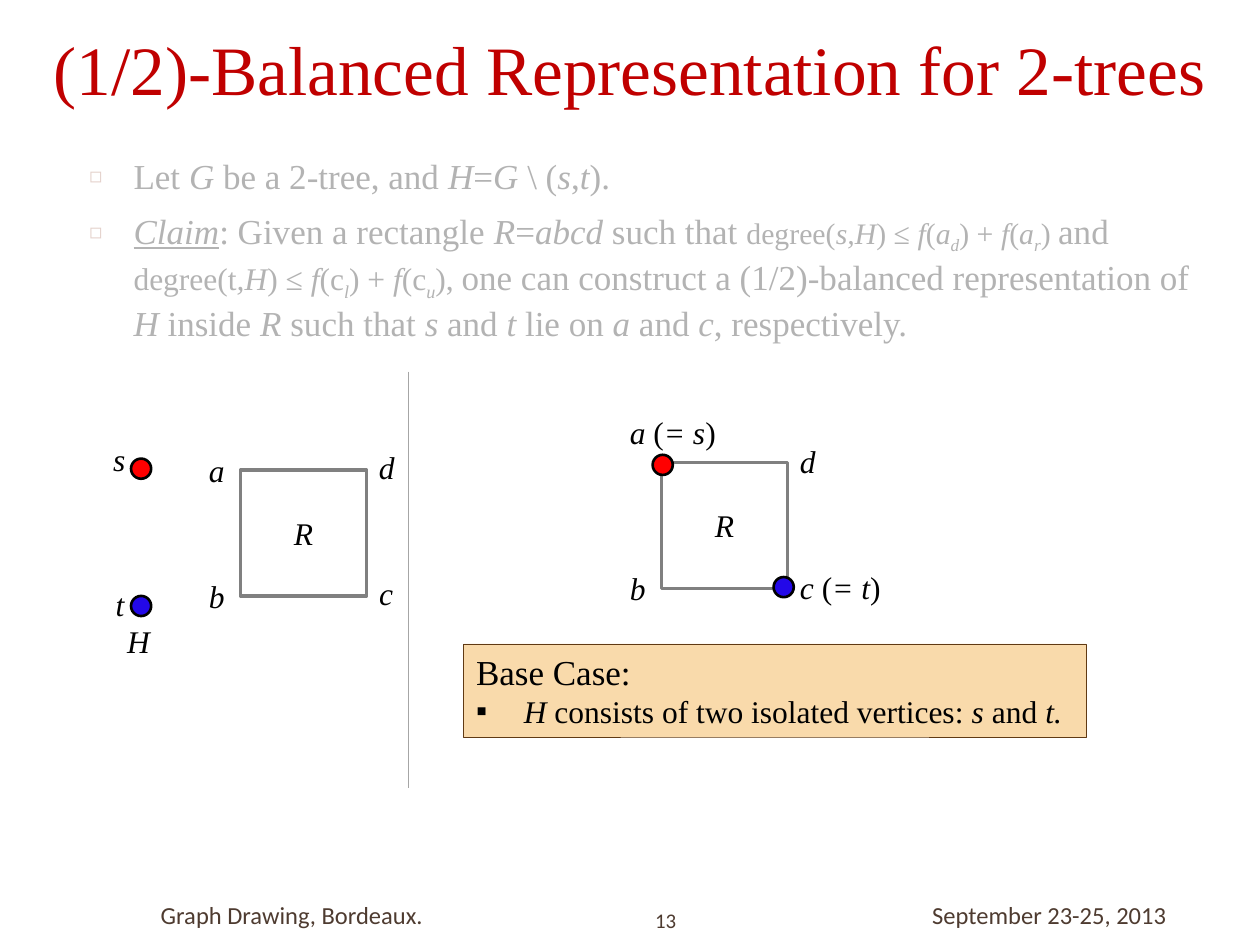
import pptx
import pptx.util
import pptx.dml.color
import pptx.enum.shapes
import pptx.enum.text
import pptx.oxml.ns
from dataclasses import dataclass
from lxml import etree

Inches, Pt = pptx.util.Inches, pptx.util.Pt
Align, Anchor = pptx.enum.text.PP_ALIGN, pptx.enum.text.MSO_ANCHOR
Shape = pptx.enum.shapes.MSO_SHAPE
qn = pptx.oxml.ns.qn


@dataclass(frozen=True)
class Theme:
    serif: str = "Times New Roman"
    sans: str = "Calibri"
    title: str = "C00000"
    text: str = "000000"
    footer: str = "4E3B30"
    bullet: str = "A5644E"
    source: str = "FF0000"
    target: str = "2308E8"
    square: str = "808080"
    box_fill: str = "F9DAAB"
    box_line: str = "603A14"
    divider: str = "A6A6A6"
    veil: str = "FFFFFF"
    title_size: float = 39.6
    body_size: float = 20
    label_size: float = 18
    footer_size: float = 14
    number_size: float = 11.9


THEME = Theme()


def rgb(value):
    return pptx.dml.color.RGBColor.from_string(value)


def place(shape, left, top, width, height):
    shape.left, shape.top = Inches(left), Inches(top)
    shape.width, shape.height = Inches(width), Inches(height)


def write(paragraph, markup, size, color=THEME.text, font=THEME.serif, underline=None):
    """Append runs: *...* is italic, _..._ is subscript."""
    for i, styled in enumerate(markup.split("*")):
        for j, text in enumerate(styled.split("_")):
            if not text:
                continue
            run = paragraph.add_run()
            run.text = text
            run.font.name, run.font.size = font, Pt(size)
            run.font.color.rgb = rgb(color)
            run.font.italic = i % 2 == 1
            run.font.underline = underline
            if j % 2:
                run.font._element.set("baseline", "-25000")


def set_bullet(paragraph, character, indent, color=None, percent=100):
    properties = paragraph._p.get_or_add_pPr()
    properties.set("marL", str(Inches(indent)))
    properties.set("indent", str(-Inches(indent)))
    if color:
        bullet_color = etree.SubElement(properties, qn("a:buClr"))
        etree.SubElement(bullet_color, qn("a:srgbClr"), val=color)
    etree.SubElement(properties, qn("a:buSzPct"), val=str(percent * 1000))
    etree.SubElement(properties, qn("a:buFont"), typeface="Arial")
    etree.SubElement(properties, qn("a:buChar"), char=character)


def add_label(slide, markup, left, top, width, height=0.4, size=THEME.label_size, **style):
    box = slide.shapes.add_textbox(0, 0, 0, 0)
    place(box, left, top, width, height)
    box.text_frame.word_wrap = False
    write(box.text_frame.paragraphs[0], markup, size, **style)
    return box


def add_footer(slide, text, left, top, width, height, size, align=Align.LEFT):
    box = add_label(slide, text, left, top, width, height, size,
                    color=THEME.footer, font=THEME.sans)
    box.text_frame.word_wrap = True
    box.text_frame.vertical_anchor = Anchor.MIDDLE
    box.text_frame.paragraphs[0].alignment = align


def add_block(slide, kind, left, top, width, height, fill=None, line=None, weight=1):
    shape = slide.shapes.add_shape(kind, 0, 0, 0, 0)
    place(shape, left, top, width, height)
    shape.shadow.inherit = False
    if fill:
        shape.fill.solid()
        shape.fill.fore_color.rgb = rgb(fill)
    else:
        shape.fill.background()
    if line:
        shape.line.color.rgb = rgb(line)
        shape.line.width = Pt(weight)
    else:
        shape.line.fill.background()
    return shape


def add_vertex(slide, left, top, fill):
    add_block(slide, Shape.OVAL, left, top, 0.16, 0.16, fill, THEME.text, 1.5)


def add_rectangle_r(slide, left, top, corners):
    """Unit square R; corners are (markup, x offset, y offset, width)."""
    square = add_block(slide, Shape.RECTANGLE, left, top, 1, 1, None, THEME.square, 2)
    square.text_frame.vertical_anchor = Anchor.MIDDLE
    paragraph = square.text_frame.paragraphs[0]
    paragraph.alignment = Align.CENTER
    write(paragraph, "*R*", THEME.label_size)
    for markup, dx, dy, width in corners:
        add_label(slide, markup, left + dx, top + dy, width)


def add_title(slide, text):
    title = slide.shapes.title
    place(title, 0, 0, 10, 1.08)
    frame = title.text_frame
    frame.auto_size = pptx.enum.text.MSO_AUTO_SIZE.NONE
    frame.vertical_anchor = Anchor.MIDDLE
    frame.paragraphs[0].alignment = Align.CENTER
    write(frame.paragraphs[0], text, THEME.title_size, THEME.title)


def add_body(slide, items):
    """Each item is a list of (markup, size, underline) pieces."""
    body = slide.placeholders[1]
    place(body, 0.61, 1.18, 9, 6.16)
    frame = body.text_frame
    frame.auto_size = pptx.enum.text.MSO_AUTO_SIZE.NONE
    for index, pieces in enumerate(items):
        paragraph = frame.add_paragraph() if index else frame.paragraphs[0]
        paragraph.space_before = Pt(7)
        set_bullet(paragraph, "◻", 0.35, THEME.bullet, 60)
        for markup, size, underline in pieces:
            write(paragraph, markup, size, underline=underline)


def add_base_case(slide):
    box = add_block(slide, Shape.RECTANGLE, 3.68, 5.11, 4.94, 0.74,
                    THEME.box_fill, THEME.box_line, 0.25)
    frame = box.text_frame
    frame.vertical_anchor = Anchor.TOP
    heading, item = frame.paragraphs[0], frame.add_paragraph()
    heading.alignment = item.alignment = Align.LEFT
    write(heading, "Base Case:", THEME.body_size)
    set_bullet(item, "▪", 0.38)
    write(item, "*H *consists of two isolated vertices:* s *and* t.*", THEME.label_size)


def add_divider(slide):
    line = slide.shapes.add_connector(pptx.enum.shapes.MSO_CONNECTOR.STRAIGHT,
                                      Inches(3.24), Inches(2.95), Inches(3.24), Inches(6.25))
    line.line.color.rgb = rgb(THEME.divider)
    line.line.width = Pt(0.79)
    etree.SubElement(line._element.spPr, qn("a:effectLst"))


def add_veil(slide):
    veil = add_block(slide, Shape.RECTANGLE, 0.26, 1, 9.34, 1.84, THEME.veil)
    color = veil._element.spPr.find(qn("a:solidFill"))[0]
    etree.SubElement(color, qn("a:alpha"), val="70000")


def main():
    presentation = pptx.Presentation()
    presentation.slide_width, presentation.slide_height = Inches(10), Inches(7.5)
    slide = presentation.slides.add_slide(presentation.slide_layouts[1])

    # Title, claim and footer
    add_title(slide, "(1/2)-Balanced Representation for 2-trees")
    size = THEME.body_size
    add_body(slide, [
        [("Let *G *be a 2-tree, and *H*=*G* \\ (*s*,*t*).", size, None)],
        [("*Claim*", size, True),
         (": Given a rectangle *R*=*abcd* such that ", size, None),
         ("degree(*s,H*) ≤ *f*(*a_d_*) + *f*(*a_r_*) ", 17, None),
         ("and ", size, None),
         ("degree(t*,H*) ≤ *f*(c*_l_*) + *f*(c*_u_*), ", 18, None),
         ("one can construct a (1/2)-balanced representation of *H* inside *R* such that "
          "*s* and *t* lie on *a* and *c*, respectively.", size, None)],
    ])
    add_footer(slide, "Graph Drawing, Bordeaux. ", 0.67, 7.06, 2.83, 0.4,
               THEME.footer_size, Align.RIGHT)
    add_footer(slide, "13", 5.1, 7.17, 0.58, 0.27, THEME.number_size)
    add_footer(slide, "September 23-25, 2013", 7.3, 7.06, 2.28, 0.4, THEME.footer_size)

    # Given graph H and rectangle R
    add_vertex(slide, 1.04, 4.73, THEME.target)
    add_vertex(slide, 1.04, 3.64, THEME.source)
    add_label(slide, "*H*", 0.91, 4.89, 0.38)
    add_label(slide, "*s*", 0.8, 3.44, 0.3)
    add_label(slide, "*t*", 0.82, 4.59, 0.27)
    add_rectangle_r(slide, 1.91, 3.73, [
        ("*a*", -0.35, -0.2, 0.33), ("*b*", -0.35, 0.8, 0.33),
        ("*c*", 1, 0.78, 0.31), ("*d*", 1, -0.22, 0.33)])

    # Base case drawing, with s on a and t on c
    add_rectangle_r(slide, 5.25, 3.67, [
        ("*a *(*= s*)", -0.35, -0.44, 0.89), ("*b*", -0.35, 0.8, 0.33),
        ("*c *(*= t*)", 1, 0.79, 0.85), ("*d*", 1, -0.21, 0.33)])
    add_vertex(slide, 6.14, 4.58, THEME.target)
    add_vertex(slide, 5.18, 3.61, THEME.source)
    add_base_case(slide)
    add_divider(slide)

    # Fade the claim
    add_veil(slide)
    presentation.save("out.pptx")


if __name__ == "__main__":
    main()
